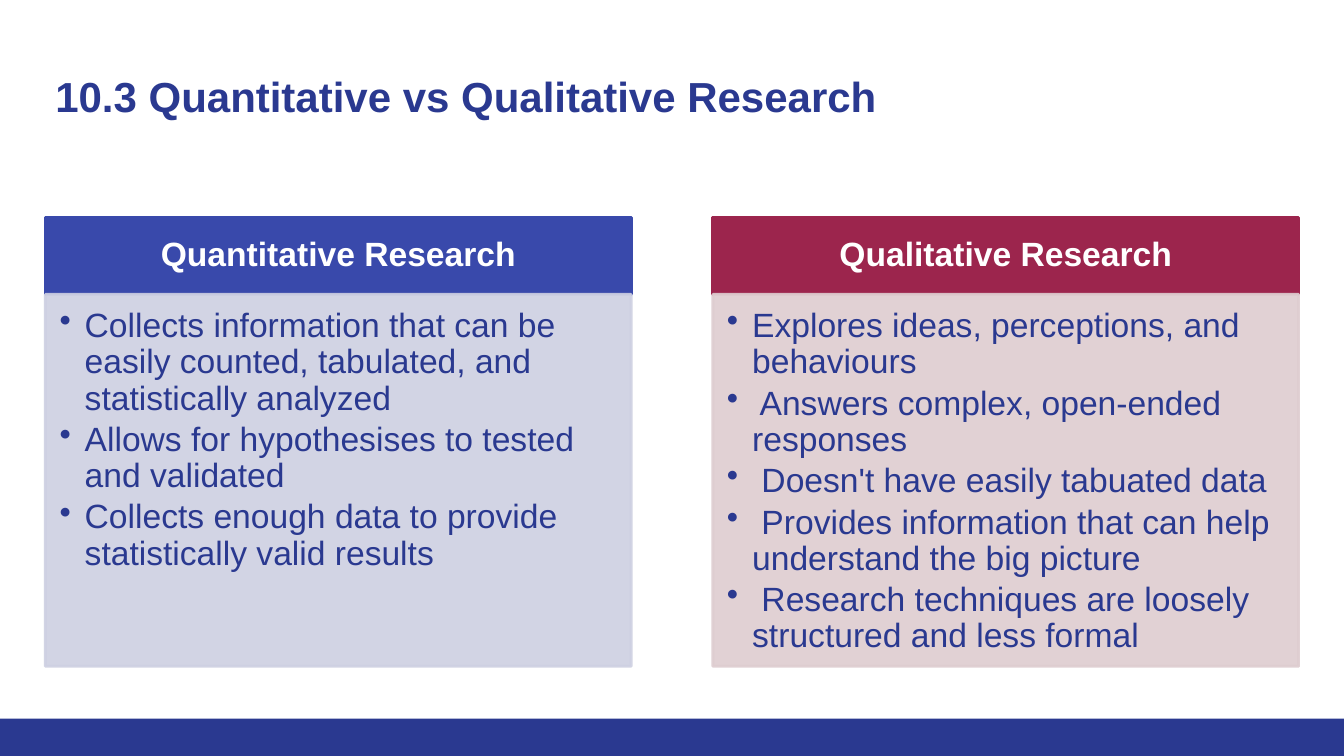
"""Build a slide that compares quantitative and qualitative research."""
from dataclasses import dataclass

from lxml.etree import SubElement
from pptx import Presentation
from pptx.dml.color import RGBColor
from pptx.enum.shapes import MSO_SHAPE
from pptx.enum.text import MSO_ANCHOR, PP_ALIGN
from pptx.oxml.ns import qn
from pptx.shapes.autoshape import Shape
from pptx.slide import Slide
from pptx.text.text import _Paragraph
from pptx.util import Inches, Pt

NAVY = "2A3990"
WHITE = "FFFFFF"
COLUMN_WIDTH = 5.81
HEADING_TOP, HEADING_HEIGHT = 2.16, 0.76
BODY_HEIGHT = 3.69


@dataclass(frozen=True)
class Method:
    left: float
    heading: str
    heading_color: str
    body_color: str
    points: tuple[str, ...]


METHODS = (
    Method(0.45, "Quantitative Research", "3949AB", "CED0E2", (
        "Collects information that can be easily counted, tabulated, and statistically analyzed",
        "Allows for hypothesises to tested and validated",
        "Collects enough data to provide statistically valid results",
    )),
    Method(7.07, "Qualitative Research", "9C254D", "DECDD0", (
        "Explores ideas, perceptions, and behaviours",
        " Answers complex, open-ended responses",
        " Doesn't have easily tabuated data",
        " Provides information that can help understand the big picture",
        " Research techniques are loosely structured and less formal",
    )),
)


def rgb(value: str) -> RGBColor:
    return RGBColor.from_string(value)


def set_insets(shape: Shape, left: float, top: float, right: float, bottom: float) -> None:
    frame = shape.text_frame
    frame.word_wrap = True
    frame.margin_left, frame.margin_top = Inches(left), Inches(top)
    frame.margin_right, frame.margin_bottom = Inches(right), Inches(bottom)


def style_text(paragraph: _Paragraph, size: float, color: str, bold: bool = False) -> None:
    font = paragraph.font
    font.name, font.size, font.bold = "Arial", Pt(size), bold
    font.color.rgb = rgb(color)


def add_panel(slide: Slide, left: float, top: float, width: float, height: float,
              color: str, opacity: int = 100) -> Shape:
    panel = slide.shapes.add_shape(
        MSO_SHAPE.RECTANGLE, Inches(left), Inches(top), Inches(width), Inches(height))
    panel.shadow.inherit = False
    panel.fill.solid()
    panel.fill.fore_color.rgb = rgb(color)
    panel.line.color.rgb = rgb(color)
    panel.line.width = Pt(2)
    if opacity < 100:
        for tint in panel._element.spPr.iter(qn("a:srgbClr")):
            SubElement(tint, qn("a:alpha"), val=str(opacity * 1000))
    return panel


def add_bullet(paragraph: _Paragraph) -> None:
    properties = paragraph._p.get_or_add_pPr()
    properties.set("marL", str(Inches(0.25)))
    properties.set("indent", str(Inches(-0.25)))
    SubElement(properties, qn("a:buChar"), char="•")


def add_title(slide: Slide) -> None:
    title = slide.shapes.add_textbox(Inches(0.45), Inches(0.6), Inches(12.42), Inches(0.89))
    set_insets(title, 0.1, 0.1, 0.1, 0.1)
    paragraph = title.text_frame.paragraphs[0]
    paragraph.text = "10.3 Quantitative vs Qualitative Research"
    style_text(paragraph, 30, NAVY, bold=True)


def add_method(slide: Slide, method: Method) -> None:
    heading = add_panel(slide, method.left, HEADING_TOP, COLUMN_WIDTH, HEADING_HEIGHT,
                        method.heading_color)
    set_insets(heading, 0.19, 0.11, 0.19, 0.11)
    heading.text_frame.vertical_anchor = MSO_ANCHOR.MIDDLE
    paragraph = heading.text_frame.paragraphs[0]
    paragraph.text = method.heading
    paragraph.alignment = PP_ALIGN.CENTER
    paragraph.line_spacing = 0.9
    style_text(paragraph, 24, WHITE, bold=True)

    body = add_panel(slide, method.left, HEADING_TOP + HEADING_HEIGHT, COLUMN_WIDTH,
                     BODY_HEIGHT, method.body_color, opacity=90)
    set_insets(body, 0.14, 0.14, 0.19, 0.21)
    body.text_frame.vertical_anchor = MSO_ANCHOR.TOP
    body.text_frame.text = "\n".join(method.points)
    for paragraph in body.text_frame.paragraphs:
        paragraph.level = 1
        paragraph.alignment = PP_ALIGN.LEFT
        paragraph.line_spacing = 0.9
        paragraph.space_after = Pt(3.6)
        add_bullet(paragraph)
        style_text(paragraph, 24, NAVY)


def main() -> None:
    deck = Presentation()
    deck.slide_width, deck.slide_height = Inches(13.33), Inches(7.5)
    slide = deck.slides.add_slide(deck.slide_layouts[6])
    footer = add_panel(slide, 0, 7.13, 13.33, 0.37, NAVY)
    footer.line.fill.background()
    add_title(slide)
    for method in METHODS:
        add_method(slide, method)
    deck.save("out.pptx")


if __name__ == "__main__":
    main()
